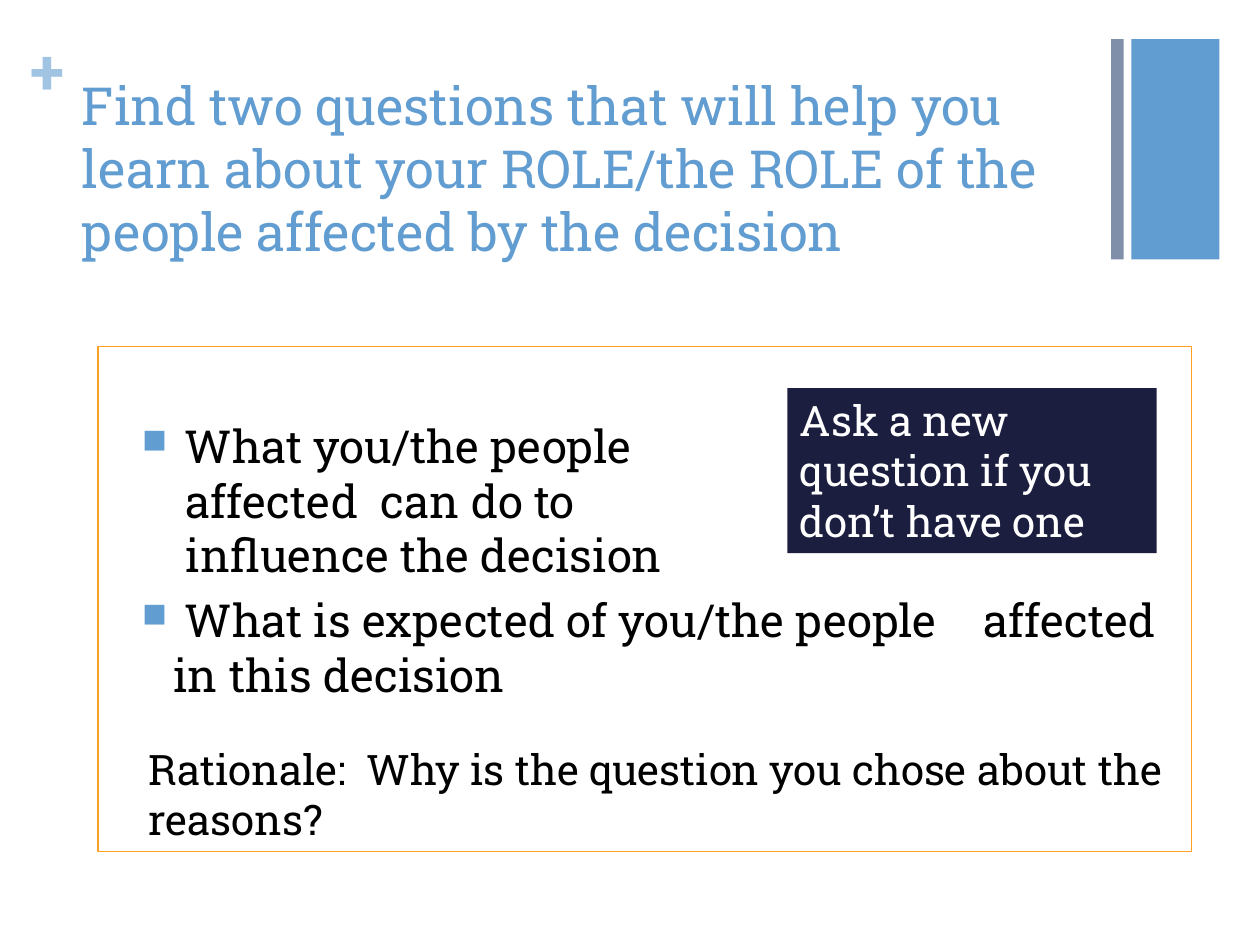
from pptx import Presentation
from pptx.dml.color import RGBColor
from pptx.enum.shapes import MSO_SHAPE
from pptx.enum.text import MSO_ANCHOR, MSO_AUTO_SIZE, PP_ALIGN
from pptx.oxml import parse_xml
from pptx.oxml.ns import nsdecls
from pptx.util import Pt

COLORS = {
    "blue": "629DD1", "pale": "A1C4E3", "slate": "7F8FA9", "orange": "FDA023",
    "navy": "1B1E3E", "black": "000000", "white": "FFFFFF",
}


def add_box(left, top, width, height, fill=None, line=None):
    box = page.shapes.add_shape(MSO_SHAPE.RECTANGLE, Pt(left), Pt(top), Pt(width), Pt(height))
    box.shadow.inherit = False
    if fill:
        box.fill.solid()
        box.fill.fore_color.rgb = RGBColor.from_string(COLORS[fill])
    else:
        box.fill.background()
    if line:
        box.line.color.rgb = RGBColor.from_string(COLORS[line])
        box.line.width = Pt(0.75)
    else:
        box.line.fill.background()
    return box


def write(box, paragraphs, size, color, bold=False, inset=(7.2, 3.6)):
    frame = box.text_frame
    side, top = inset
    frame_format = {
        "word_wrap": True, "auto_size": MSO_AUTO_SIZE.NONE,
        "vertical_anchor": MSO_ANCHOR.TOP, "margin_left": Pt(side),
        "margin_right": Pt(side), "margin_top": Pt(top), "margin_bottom": Pt(min(top, 3.6)),
    }
    for name, value in frame_format.items():
        setattr(frame, name, value)
    for index, spans in enumerate(paragraphs):
        para = frame.paragraphs[0] if index == 0 else frame.add_paragraph()
        para.alignment = PP_ALIGN.LEFT
        para.space_before = Pt(0)
        for text in spans:
            span = para.add_run()
            span.text = text
            span_format = {"name": "Roboto Slab", "size": Pt(size), "bold": bold}
            for name, value in span_format.items():
                setattr(span.font, name, value)
            span.font.color.rgb = RGBColor.from_string(COLORS[color])
    return frame.paragraphs


deck = Presentation()
deck.slide_width, deck.slide_height = Pt(720), Pt(540)
page = deck.slides.add_slide(deck.slide_layouts[5])

add_box(646.5, 22.3, 50.4, 126, fill="blue")
add_box(635, 22.3, 7.2, 126, fill="slate")
plus = page.shapes.add_textbox(Pt(17.3), Pt(18), Pt(21), Pt(44))
write(plus, [["+"]], 36, "pale", bold=True, inset=(0, 0))

title = page.shapes.title
title_place = {"left": Pt(39.6), "top": Pt(38), "width": Pt(594.7), "height": Pt(87.8)}
for name, value in title_place.items():
    setattr(title, name, value)
write(title, [["Find two questions that will help you learn about your ROLE/the ROLE "
               "of the people affected by the decision"]], 30, "blue")

body = add_box(56, 198, 625, 288.7, line="orange")
body_paras = write(body, [
    [" What you/the people"],
    ["affected  can do to"],
    ["influence the decision"],
    [" What is expected of you/the people", " ", "affected  in this decision"],
], 26, "black", inset=(7.2, 41))

for para, (indent, bulleted) in zip(body_paras, [(36, True), (43, False), (43, False), (36, True)]):
    settings = para._p.get_or_add_pPr()
    settings.set("marL", str(Pt(indent)))
    settings.set("indent", str(Pt(-18 if bulleted else 0)))
    if bulleted:
        para.space_before = Pt(6)
        for markup in (
            f'<a:buClr {nsdecls("a")}><a:srgbClr val="{COLORS["blue"]}"/></a:buClr>',
            f'<a:buSzPct {nsdecls("a")} val="75000"/>',
            f'<a:buChar {nsdecls("a")} char="■"/>',
        ):
            settings.append(parse_xml(markup))
body_paras[0].space_before = Pt(0)
wide_gap = body_paras[3].runs[1]
wide_gap.font._element.set("spc", "1950")

callout = add_box(450, 221.8, 211, 94.3, fill="navy")
write(callout, [["Ask a new question if you don’t have one"]], 24, "white")

rationale = page.shapes.add_textbox(Pt(77.8), Pt(421.2), Pt(612), Pt(65.5))
write(rationale, [["Rationale:  Why is the question you chose about the reasons?"]], 24, "black")

deck.save("out.pptx")
